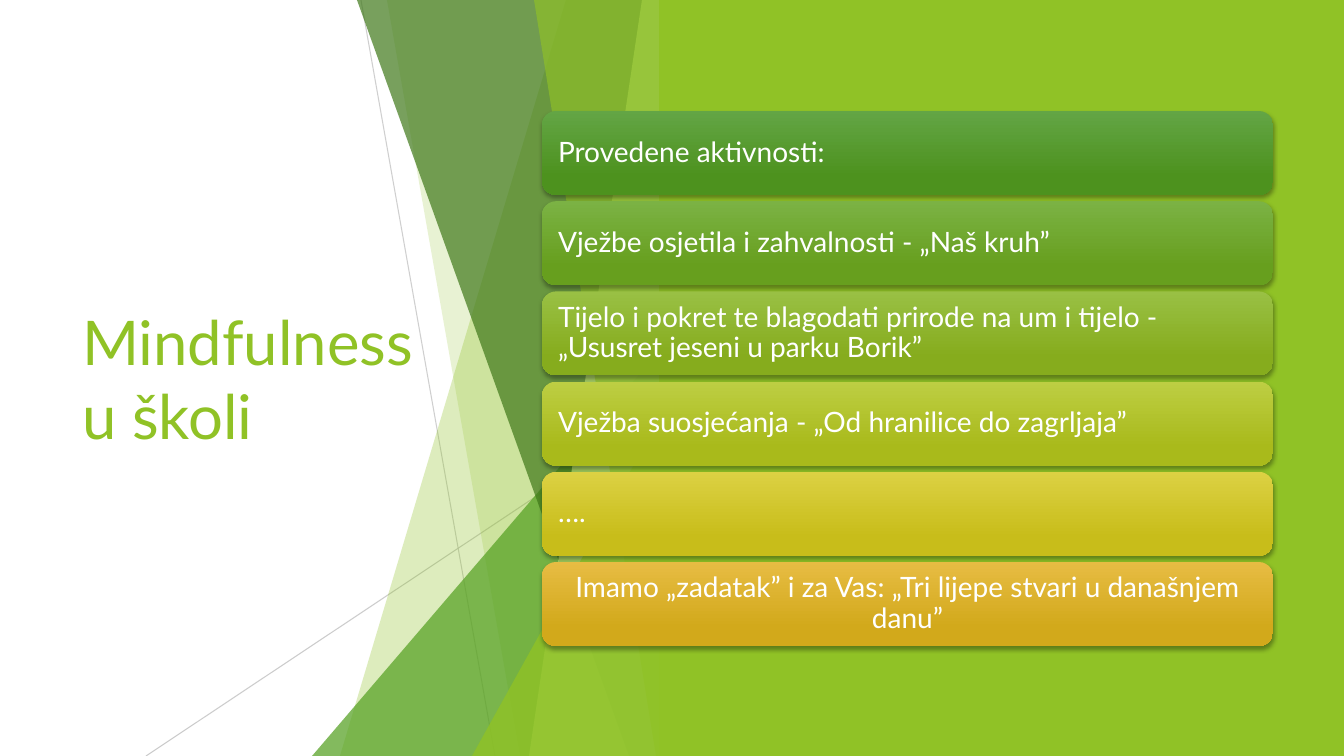
import lxml.etree
import pptx
import pptx.dml.color
import pptx.enum.shapes
import pptx.enum.text
import pptx.oxml.ns
import pptx.util

RGB = pptx.dml.color.RGBColor
LIME = RGB(0x90, 0xC2, 0x26)
GREEN = RGB(0x54, 0xA0, 0x21)
DARK = RGB(0x3F, 0x78, 0x19)
PALE = RGB(0xC0, 0xE4, 0x74)
GREY = RGB(0xBF, 0xBF, 0xBF)
WHITE = RGB(0xFF, 0xFF, 0xFF)
SHAPE = pptx.enum.shapes.MSO_SHAPE
ALIGN = pptx.enum.text.PP_ALIGN
FONT = "Lato"

BARS = [
    ("Provedene aktivnosti:", RGB(0x63, 0xA5, 0x45), RGB(0x4D, 0x92, 0x1E), ALIGN.LEFT),
    ("Vježbe osjetila i zahvalnosti - „Naš kruh”",
     RGB(0x7B, 0xB2, 0x44), RGB(0x67, 0x9F, 0x1E), ALIGN.LEFT),
    ("Tijelo i pokret te blagodati prirode na um i tijelo - „Ususret jeseni u parku Borik”",
     RGB(0x99, 0xC0, 0x44), RGB(0x86, 0xAC, 0x1D), ALIGN.LEFT),
    ("Vježba suosjećanja - „Od hranilice do zagrljaja”",
     RGB(0xBD, 0xCE, 0x43), RGB(0xA9, 0xBA, 0x1B), ALIGN.LEFT),
    ("….", RGB(0xDC, 0xD1, 0x43), RGB(0xC8, 0xBD, 0x1A), ALIGN.LEFT),
    ("Imamo „zadatak” i za Vas: „Tri lijepe stvari u današnjem danu”",
     RGB(0xE7, 0xBC, 0x43), RGB(0xD2, 0xA9, 0x1B), ALIGN.CENTER),
]


def px(*vals):
    """Turn pixel lengths into EMU at 100.8 pixels to the inch."""
    return [pptx.util.Emu(round(v * 914400 / 100.8)) for v in vals]


def node(owner, tag, **attrs):
    """Add a drawing element under its owner."""
    return lxml.etree.SubElement(owner, pptx.oxml.ns.qn(tag), attrs)


def fade(fill, color, alpha):
    """Fill with a colour at an opacity in percent."""
    fill.solid()
    fill.fore_color.rgb = color
    if alpha < 100:
        tag = pptx.oxml.ns.qn("a:srgbClr")
        clr = next(fill._xPr.find(pptx.oxml.ns.qn("a:solidFill")).iter(tag))
        node(clr, "a:alpha", val=str(alpha * 1000))


def paint(shape, color, alpha=100):
    """Give a shape a flat fill with no outline or shadow."""
    fade(shape.fill, color, alpha)
    shape.line.fill.background()
    shape.shadow.inherit = False


def write(frame, text, size=20, color=WHITE, align=ALIGN.LEFT, space=None, inset=None):
    """Put one formatted paragraph in a text frame."""
    frame.word_wrap = True
    frame.vertical_anchor = pptx.enum.text.MSO_ANCHOR.MIDDLE
    if inset is not None:
        pad, = px(inset)
        frame.margin_left = frame.margin_right = pad
        frame.margin_top = frame.margin_bottom = pad
    para = frame.paragraphs[0]
    para.alignment = align
    para.line_spacing = space
    run = para.add_run()
    run.text = text
    run.font.name = FONT
    run.font.size = pptx.util.Pt(size)
    run.font.color.rgb = color


def title(slide, x, y, w, h):
    """Place the slide title in its box."""
    head = slide.shapes.title
    head.left, head.top, head.width, head.height = px(x, y, w, h)
    write(head.text_frame, "Mindfulness u školi", size=44, color=LIME)


def rule(slide, ends, alpha):
    """Draw a thin grey line."""
    line = slide.shapes.add_connector(pptx.enum.shapes.MSO_CONNECTOR.STRAIGHT, *px(*ends))
    line.line.width = pptx.util.Pt(0.75)
    fade(line.line.fill, GREY, alpha)
    node(line._element.spPr, "a:effectLst")


def facet(slide, box, top, base, color, alpha):
    """Draw a slanted pane that reaches the right edge of the box."""
    x, y, w, h = box
    pts = [px(x + dx, y + dy) for dx, dy in ((top, 0), (w, 0), (w, h), (base, h))]
    form = slide.shapes.build_freeform(*pts[0])
    form.add_line_segments(pts[1:], close=True)
    paint(form.convert_to_shape(), color, alpha)


def wedge(slide, box, left, top, color, alpha):
    """Draw a right triangle in the lower right corner of the box."""
    x, y, w, h = box
    tri = slide.shapes.add_shape(
        SHAPE.ISOSCELES_TRIANGLE, *px(x + left, y + top, w - left, h - top))
    tri.adjustments[0] = 1
    paint(tri, color, alpha)


def decor(slide, x, y, w, h):
    """Draw the layered panes and lines."""
    box = x, y, w, h
    rule(slide, (x + 361, y, x + 495, y + h), 75)
    rule(slide, (x + w, y + 406, x + 146, y + h), 80)
    facet(slide, box, 566, 340, LIME, 30)
    facet(slide, box, 387, 520, LIME, 20)
    wedge(slide, box, 312, 336, GREEN, 72)
    facet(slide, box, 357, 629, DARK, 70)
    facet(slide, box, 642, 529, PALE, 70)
    facet(slide, box, 534, 656, LIME, 65)
    wedge(slide, box, 472, 396, LIME, 80)


def panel(slide, x, y, w, h):
    """Draw the plain green side panel."""
    paint(slide.shapes.add_shape(SHAPE.RECTANGLE, *px(x, y, w, h)), LIME)


def bar(slide, box, text, light, deep, align):
    """Draw one rounded bar with a gradient, a shadow and its text."""
    shape = slide.shapes.add_shape(SHAPE.ROUNDED_RECTANGLE, *px(*box))
    shape.fill.gradient()
    shape.fill.gradient_angle = 270
    for stop, color, place in zip(shape.fill.gradient_stops, (light, deep), (0, 0.78)):
        stop.color.rgb = color
        stop.position = place
    shape.line.fill.background()
    shape.shadow.inherit = False
    fx = shape._element.spPr.find(pptx.oxml.ns.qn("a:effectLst"))
    glow = node(fx, "a:outerShdw", blurRad="38100", dist="25400",
                dir="5400000", rotWithShape="0")
    node(node(glow, "a:srgbClr", val="000000"), "a:alpha", val="35000")
    write(shape.text_frame, text, align=align, space=0.9, inset=12)


def stack(slide, x, y, w, h, tall=84):
    """Spread the bars evenly down the box."""
    step = (h - tall) / (len(BARS) - 1)
    for i, item in enumerate(BARS):
        bar(slide, (x, y + i * step, w, tall), *item)


def main():
    """Build the slide and save it."""
    deck = pptx.Presentation()
    deck.slide_width, deck.slide_height = px(1344, 756)
    slide = deck.slides.add_slide(deck.slide_layouts[5])
    title(slide, 72, 152, 391, 452)
    decor(slide, 0, 0, 672, 756)
    panel(slide, 659, 0, 685, 756)
    stack(slide, 542, 111, 731, 535)
    deck.save("out.pptx")


if __name__ == "__main__":
    main()
